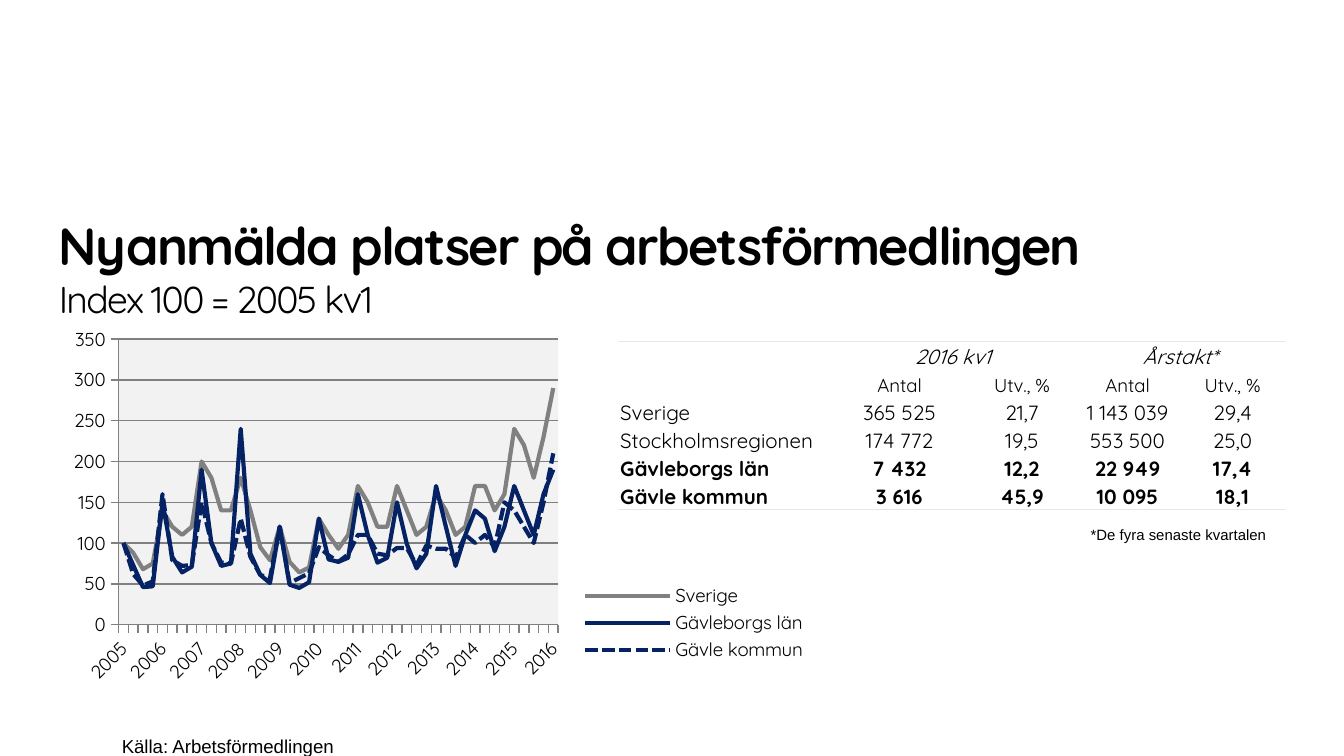
"""Build the slide on newly registered vacancies: index chart and quarterly table."""
from lxml.etree import SubElement
from pptx import Presentation
from pptx.chart.data import CategoryChartData
from pptx.dml.color import RGBColor
from pptx.enum.chart import XL_CHART_TYPE, XL_LEGEND_POSITION, XL_TICK_MARK
from pptx.enum.dml import MSO_LINE
from pptx.enum.text import MSO_ANCHOR, MSO_AUTO_SIZE, PP_ALIGN
from pptx.oxml import parse_xml
from pptx.oxml.ns import nsdecls, qn
from pptx.util import Pt

PX = 9525
BLACK, GRAY, NAVY = "000000", "808080", "052364"
NO_GRID_STYLE = "{2D5ABB26-0587-4C30-8999-92F81FD0307C}"


def color(value):
    return RGBColor.from_string(value)


def style(font, size, name="Quicksand", bold=False, italic=False):
    font.size, font.name, font.bold, font.italic = Pt(size), name, bold, italic
    font.color.rgb = color(BLACK)


prs = Presentation()
prs.slide_width, prs.slide_height = 960 * PX, 540 * PX
slide = prs.slides.add_slide(prs.slide_layouts[5])

heading = slide.shapes.title
heading.left, heading.top, heading.width, heading.height = [n * PX for n in (42, 153, 748, 76)]
frame = heading.text_frame
frame.margin_left = frame.margin_right = frame.margin_top = frame.margin_bottom = 0
frame.auto_size = MSO_AUTO_SIZE.NONE
frame.vertical_anchor = MSO_ANCHOR.MIDDLE
lines = frame.paragraphs[0]
lines.alignment = PP_ALIGN.LEFT
for text, size, bold in [("Nyanmälda platser på arbetsförmedlingen", 28, True),
                         ("Index 100 = 2005 kv1", 20, False)]:
    if lines.runs:
        lines.add_line_break()
    run = lines.add_run()
    run.text = text
    style(run.font, size, bold=bold)
    run.font._element.set("spc", "-90")

for text, size, left, top, width, height in [
        ("Källa: Arbetsförmedlingen", 10, 87, 509, 165, 40),
        ("*De fyra senaste kvartalen", 8, 779, 356, 140, 96)]:
    note = slide.shapes.add_textbox(left * PX, top * PX, width * PX, height * PX).text_frame
    note.margin_left = note.margin_right = note.margin_top = note.margin_bottom = 0
    note.word_wrap = True
    note.text = text
    note.paragraphs[0].line_spacing = Pt(24)
    style(note.paragraphs[0].font, size, "Arial")

rows = [
    ["", "2016 kv1", "", "Årstakt*", ""],
    ["", "Antal", "Utv., %", "Antal", "Utv., %"],
    ["Sverige", "365 525", "21,7", "1 143 039", "29,4"],
    ["Stockholmsregionen", "174 772", "19,5", "553 500", "25,0"],
    ["Gävleborgs län", "7 432", "12,2", "22 949", "17,4"],
    ["Gävle kommun", "3 616", "45,9", "10 095", "18,1"],
]
vacancies = slide.shapes.add_table(6, 5, 442 * PX, 244 * PX, 476 * PX, 120 * PX).table
vacancies.first_row = vacancies.horz_banding = False
vacancies._tbl.tblPr.find(qn("a:tableStyleId")).text = NO_GRID_STYLE
for column, width in zip(vacancies.columns, (151, 99, 76, 75, 75)):
    column.width = width * PX
for r, row in enumerate(rows):
    vacancies.rows[r].height = 20 * PX
    size = 10 if r == 1 else 11
    for c, text in enumerate(row):
        cell = vacancies.cell(r, c)
        cell.text = text
        cell.margin_left = cell.margin_right = cell.margin_top = PX
        cell.margin_bottom = 0
        cell.vertical_anchor = MSO_ANCHOR.BOTTOM
        cell.fill.background()
        entry = cell.text_frame.paragraphs[0]
        entry.alignment = PP_ALIGN.CENTER if c else PP_ALIGN.LEFT
        style(entry.font, size, bold=r > 3, italic=r == 0)
        if not text:
            SubElement(entry._p, qn("a:endParaRPr")).set("sz", str(size * 100))
        if r in (0, 5):
            edge = "lnT" if r == 0 else "lnB"
            cell._tc.get_or_add_tcPr().insert(0, parse_xml(
                f'<a:{edge} {nsdecls("a")} w="12700"><a:solidFill><a:srgbClr val="E6E6E6"/>'
                f'</a:solidFill></a:{edge}>'))
for c in (1, 3):
    vacancies.cell(0, c).merge(vacancies.cell(0, c + 1))

series = [
    ("Sverige", GRAY, MSO_LINE.SOLID, [
        100, 88, 68, 75, 140, 120, 110, 120, 200, 180, 140, 140, 180, 140, 95, 79, 120, 77, 64, 70,
        130, 110, 93, 110, 170, 150, 120, 120, 170, 140, 110, 120, 160, 140, 110, 120, 170, 170,
        140, 160, 240, 220, 180, 230, 290]),
    ("Gävleborgs län", NAVY, MSO_LINE.SOLID, [
        100, 73, 46, 47, 150, 83, 64, 71, 190, 100, 72, 75, 240, 87, 61, 51, 120, 49, 45, 52,
        130, 80, 77, 82, 160, 110, 76, 82, 150, 99, 69, 87, 170, 120, 72, 110, 140, 130,
        90, 120, 170, 140, 110, 160, 190]),
    ("Gävle kommun", NAVY, MSO_LINE.SQUARE_DOT, [
        100, 62, 48, 53, 160, 79, 72, 73, 150, 100, 76, 75, 130, 83, 61, 57, 120, 51, 57, 63,
        95, 85, 77, 86, 110, 110, 87, 85, 94, 94, 73, 97, 93, 93, 82, 110, 100, 110,
        95, 150, 140, 120, 100, 150, 210]),
]
data = CategoryChartData(number_format="General")
data.categories = ["" if quarter % 4 else str(2005 + quarter // 4) for quarter in range(45)]
for name, _, _, values in series:
    data.add_series(name, values)
chart = slide.shapes.add_chart(XL_CHART_TYPE.LINE, 39 * PX, 229 * PX, 571 * PX, 265 * PX, data).chart
chart.has_title = False
style(chart.font, 10)
for plotted, (_, shade, dash, _) in zip(chart.plots[0].series, series):
    plotted.smooth = False
    plotted.format.line.width = Pt(2.25)
    plotted.format.line.color.rgb = color(shade)
    plotted.format.line.dash_style = dash
chart.plots[0].vary_by_categories = False

years, index = chart.category_axis, chart.value_axis
index.minimum_scale, index.maximum_scale, index.major_unit = 0, 350, 50
index.has_major_gridlines = True
index.tick_labels.number_format = "#,##0"
index.tick_labels.number_format_is_linked = False
for line in (years.format.line, index.format.line, index.major_gridlines.format.line):
    line.width = Pt(0.75)
    line.color.rgb = color(GRAY)
for axis in (years, index):
    axis.major_tick_mark = XL_TICK_MARK.OUTSIDE
    style(axis.tick_labels.font, 10)
years._element.find(qn("c:txPr")).find(qn("a:bodyPr")).set("rot", "-2700000")
for skip in ("tickLblSkip", "tickMarkSkip"):
    years._element.find(qn("c:noMultiLvlLbl")).addprevious(
        parse_xml(f'<c:{skip} {nsdecls("c")} val="1"/>'))

chart.has_legend = True
legend = chart.legend
legend.position = XL_LEGEND_POSITION.RIGHT
legend.include_in_layout = False
style(legend.font, 10)

plot_area = chart._chartSpace.chart.plotArea
plot_area.append(parse_xml(
    f'<c:spPr {nsdecls("c", "a")}><a:solidFill><a:srgbClr val="F2F2F2"/></a:solidFill></c:spPr>'))
for part, position, target, box in [
        (plot_area, 0, '<c:layoutTarget val="inner"/>', (0.08, 0.05, 0.55, 0.77)),
        (legend._element, 1, "", (0.65, 0.7, 0.3, 0.23))]:
    for automatic in part.findall(qn("c:layout")):
        part.remove(automatic)
    sides = "".join(f'<c:{side} val="{share}"/>' for side, share in zip("xywh", box))
    part.insert(position, parse_xml(
        f'<c:layout {nsdecls("c")}><c:manualLayout>{target}<c:xMode val="edge"/>'
        f'<c:yMode val="edge"/>{sides}</c:manualLayout></c:layout>'))

prs.save("out.pptx")
